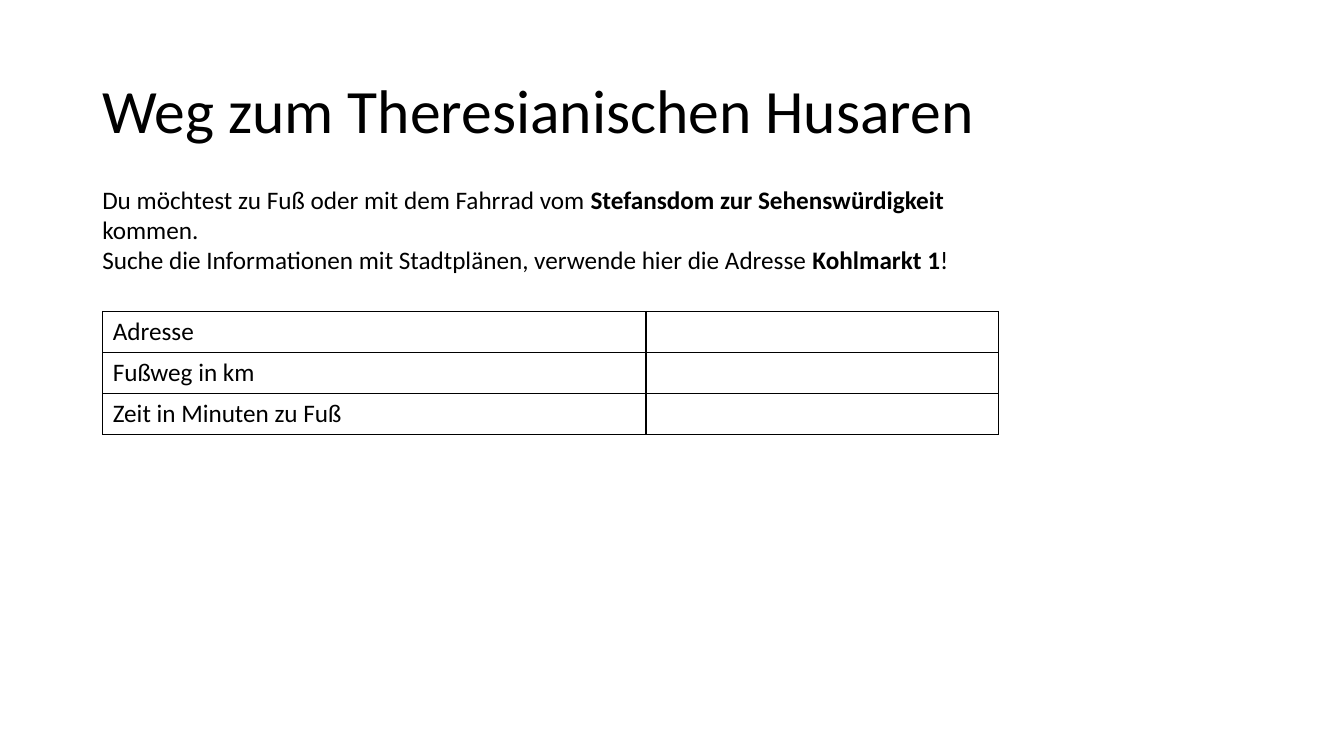
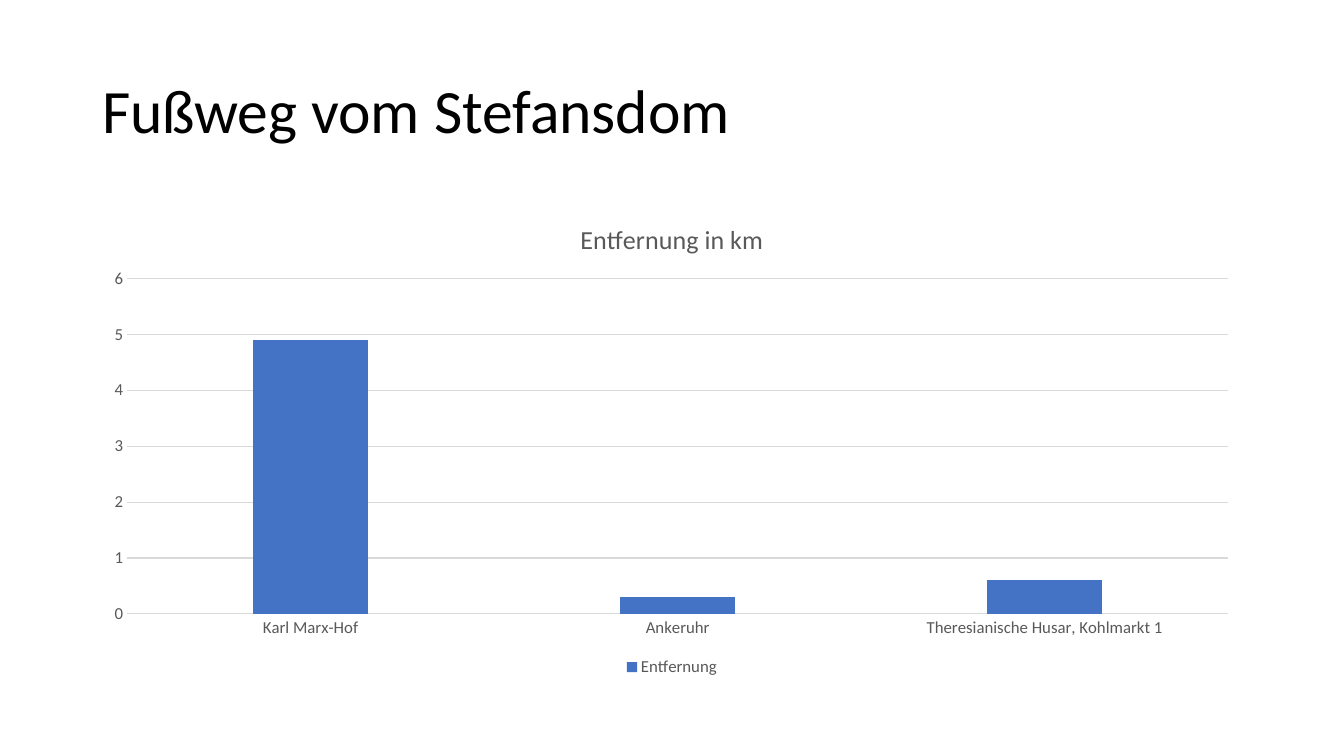
from lxml import etree
from pptx import Presentation
from pptx.chart.data import CategoryChartData
from pptx.dml.color import RGBColor
from pptx.enum.chart import XL_CHART_TYPE, XL_LEGEND_POSITION, XL_TICK_MARK
from pptx.enum.text import MSO_ANCHOR
from pptx.oxml import parse_xml
from pptx.oxml.ns import nsdecls, qn
from pptx.util import Pt

COLUMN_CLUSTERED = XL_CHART_TYPE.COLUMN_CLUSTERED
LEGEND_BOTTOM = XL_LEGEND_POSITION.BOTTOM
NO_TICKS = XL_TICK_MARK.NONE
MIDDLE = MSO_ANCHOR.MIDDLE

FONT = "Calibri"
BLACK, WHITE, GRAY, LIGHT_GRAY, BLUE = "000000", "FFFFFF", "595959", "D9D9D9", "4472C4"
LEFT, CONTENT_WIDTH = 66, 828
TITLES = ["Weg zum Theresianischen Husaren", "Fußweg vom Stefansdom"]


def color(hex_value):
    return RGBColor.from_string(hex_value)


def style_font(font, size, hex_value=BLACK):
    font.name = FONT
    font.size = Pt(size)
    font.color.rgb = color(hex_value)


presentation = Presentation()
presentation.slide_width = Pt(960)
presentation.slide_height = Pt(540)

for title in TITLES:
    slide = presentation.slides.add_slide(presentation.slide_layouts[6])
    title_box = slide.shapes.add_textbox(Pt(LEFT), Pt(28.75), Pt(CONTENT_WIDTH), Pt(104.4))
    title_box.text_frame.word_wrap = True
    title_box.text_frame.vertical_anchor = MIDDLE
    paragraph = title_box.text_frame.paragraphs[0]
    paragraph.text = title
    paragraph.line_spacing = 0.9
    style_font(paragraph.font, 44)

task_slide, chart_slide = presentation.slides

# Task text
task_box = task_slide.shapes.add_textbox(Pt(LEFT), Pt(128), Pt(640), Pt(72.7))
task_box.text_frame.word_wrap = True
paragraph = task_box.text_frame.paragraphs[0]
task_runs = [
    ("Du möchtest zu Fuß oder mit dem Fahrrad vom ", False),
    ("Stefansdom zur Sehenswürdigkeit ", True),
    ("kommen.", False),
    ("\n", False),
    ("Suche die Informationen mit Stadtplänen, verwende hier die Adresse ", False),
    ("Kohlmarkt 1", True),
    ("!", False),
]
for text, bold in task_runs:
    if text == "\n":
        paragraph.add_line_break()
        continue
    run = paragraph.add_run()
    run.text = text
    run.font.bold = bold
style_font(paragraph.font, 18)

# Answer table
row_labels = ["Adresse", "Fußweg in km", "Zeit in Minuten zu Fuß"]
column_widths = [388, 252]
row_height = 29.2
table = task_slide.shapes.add_table(
    len(row_labels), len(column_widths), Pt(73.4), Pt(222.5),
    Pt(sum(column_widths)), Pt(row_height * len(row_labels))).table
table.first_row = False
table.horz_banding = False
for column, width in zip(table.columns, column_widths):
    column.width = Pt(width)
for row, label in zip(table.rows, row_labels):
    row.height = Pt(row_height)
    row.cells[0].text = label
    for cell in row.cells:
        style_font(cell.text_frame.paragraphs[0].font, 18)
        properties = cell._tc.get_or_add_tcPr()
        for side in ("lnL", "lnR", "lnT", "lnB"):
            border = etree.SubElement(properties, qn(f"a:{side}"), w=str(Pt(1)))
            fill = etree.SubElement(border, qn("a:solidFill"))
            etree.SubElement(fill, qn("a:srgbClr"), val=BLACK)
        cell.fill.solid()
        cell.fill.fore_color.rgb = color(WHITE)

# Distance chart
chart_data = CategoryChartData()
chart_data.categories = ["Karl Marx-Hof", "Ankeruhr", "Theresianische Husar, Kohlmarkt 1"]
chart_data.add_series("Entfernung", [4.9, 0.3, 0.6])
chart = chart_slide.shapes.add_chart(
    COLUMN_CLUSTERED, Pt(LEFT), Pt(144), Pt(CONTENT_WIDTH), Pt(342.6), chart_data).chart
style_font(chart.font, 12, GRAY)

chart.has_title = True
paragraph = chart.chart_title.text_frame.paragraphs[0]
paragraph.text = "Entfernung in km"
style_font(paragraph.font, 18.6, GRAY)
paragraph.font.bold = False

chart.has_legend = True
chart.legend.position = LEGEND_BOTTOM
chart.legend.include_in_layout = False
style_font(chart.legend.font, 12, GRAY)

plot = chart.plots[0]
plot.gap_width = 219
plot.overlap = -27
plot.vary_by_categories = False
series_fill = plot.series[0].format.fill
series_fill.solid()
series_fill.fore_color.rgb = color(BLUE)

category_axis, value_axis = chart.category_axis, chart.value_axis
for axis in (category_axis, value_axis):
    axis.major_tick_mark = NO_TICKS
    axis.minor_tick_mark = NO_TICKS
    style_font(axis.tick_labels.font, 12, GRAY)
value_axis.minimum_scale = 0
value_axis.maximum_scale = 6
value_axis.major_unit = 1
value_axis.format.line.fill.background()
for line in (category_axis.format.line, value_axis.major_gridlines.format.line):
    line.width = Pt(0.75)
    line.color.rgb = color(LIGHT_GRAY)

# Fixed place of the plot, as shares of the chart
plot_area = chart._chartSpace.chart.plotArea
for old_layout in plot_area.findall(qn("c:layout")):
    plot_area.remove(old_layout)
layout = parse_xml(f"<c:layout {nsdecls('c')}><c:manualLayout/></c:layout>")
plot_place = {"layoutTarget": "inner", "xMode": "edge", "yMode": "edge",
              "x": 0.03, "y": 0.16, "w": 0.95, "h": 0.7}
for tag, value in plot_place.items():
    etree.SubElement(layout[0], qn(f"c:{tag}"), val=str(value))
plot_area.insert(0, layout)

presentation.save("out.pptx")
